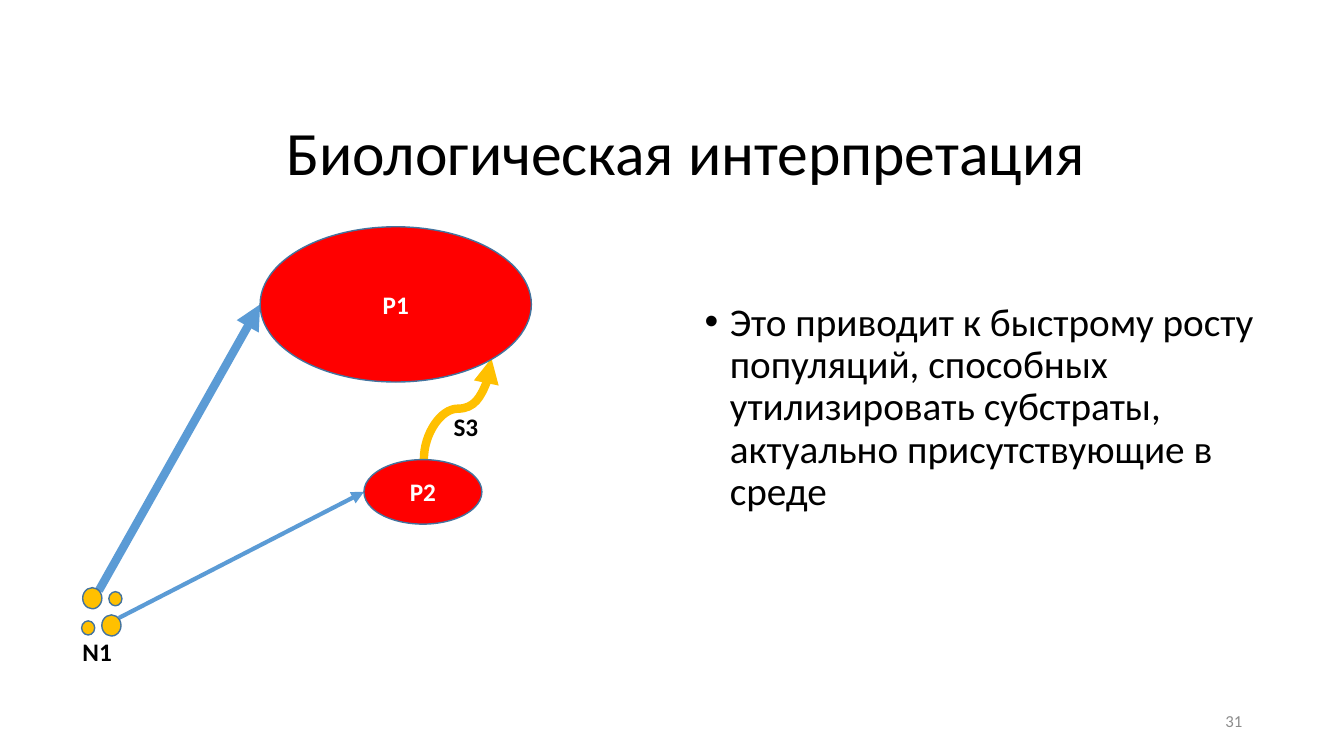
from lxml import etree
from pptx import Presentation
from pptx.dml.color import RGBColor
from pptx.enum import shapes, text
from pptx.oxml import ns
from pptx.util import Inches, Pt

BLACK = RGBColor(0x00, 0x00, 0x00)
WHITE = RGBColor(0xFF, 0xFF, 0xFF)
GRAY = RGBColor(0x8C, 0x8C, 0x8C)
RED = RGBColor(0xFF, 0x00, 0x00)
GOLD = RGBColor(0xFF, 0xC0, 0x00)
BLUE = RGBColor(0x5B, 0x9B, 0xD5)
OUTLINE = RGBColor(0x43, 0x73, 0x9E)

presentation = Presentation()
presentation.slide_width = Inches(13.33)
presentation.slide_height = Inches(7.5)
slide = presentation.slides.add_slide(presentation.slide_layouts[6])


def write(shape, words, size, color, bold=False, align=text.PP_ALIGN.LEFT,
          anchor=text.MSO_ANCHOR.MIDDLE, wrap=True):
    """Put one formatted paragraph into the shape and return it."""
    frame = shape.text_frame
    frame.text = words
    frame.word_wrap = wrap
    frame.vertical_anchor = anchor
    paragraph = frame.paragraphs[0]
    paragraph.alignment = align
    font = paragraph.runs[0].font
    font.name, font.size, font.bold = "Calibri", Pt(size), bold
    font.color.rgb = color
    return paragraph


title = slide.shapes.add_textbox(Inches(2.74), Inches(0.84), Inches(9.84), Inches(1.41))
write(title, "Биологическая интерпретация", 44, BLACK).line_spacing = 0.9

body = slide.shapes.add_textbox(Inches(6.89), Inches(2.95), Inches(5.87), Inches(3.86))
paragraph = write(
    body,
    "Это приводит к быстрому росту популяций, способных утилизировать субстраты, "
    "актуально присутствующие в среде",
    28, BLACK, anchor=text.MSO_ANCHOR.TOP)
paragraph.line_spacing = 0.9
properties = paragraph._p.get_or_add_pPr()
properties.set("marL", str(Inches(0.25)))
properties.set("indent", str(-Inches(0.25)))
etree.SubElement(properties, ns.qn("a:buFont")).set("typeface", "Arial")
etree.SubElement(properties, ns.qn("a:buChar")).set("char", "•")

# Populations, arrows and substrate grains, from back to front
ellipses = [
    ("P1", 2.58, 2.25, 2.69, 1.54, RED),
    ("P2", 3.61, 4.56, 1.17, 0.64, RED),
    ("", 0.82, 5.83, 0.19, 0.21, GOLD),
    ("", 1.01, 6.1, 0.19, 0.21, GOLD),
    ("", 1.08, 5.87, 0.13, 0.14, GOLD),
    ("", 0.81, 6.16, 0.13, 0.14, GOLD),
]
STRAIGHT, CURVE = shapes.MSO_CONNECTOR.STRAIGHT, shapes.MSO_CONNECTOR.CURVE
# The curve is laid out sideways and turned by a quarter
arrows = [
    (STRAIGHT, 0.98, 5.86, 2.58, 3.02, BLUE, 6, 0),
    (STRAIGHT, 1.18, 6.13, 3.61, 4.88, BLUE, 3, 0),
    (CURVE, 5.04, 4.39, 4.04, 3.72, GOLD, 6, 90),
]

for kind, x1, y1, x2, y2, color, width, turn in arrows:
    arrow = slide.shapes.add_connector(kind, Inches(x1), Inches(y1), Inches(x2), Inches(y2))
    arrow.line.color.rgb = color
    arrow.line.width = Pt(width)
    etree.SubElement(arrow.line._get_or_add_ln(), ns.qn("a:tailEnd")).set("type", "triangle")
    shape_properties = arrow._element.spPr
    etree.SubElement(shape_properties, ns.qn("a:effectLst"))
    if turn:
        shape_properties.find(ns.qn("a:xfrm")).set("rot", str(turn * 60000))

for label, left, top, width, height, color in ellipses:
    ellipse = slide.shapes.add_shape(
        shapes.MSO_SHAPE.OVAL, Inches(left), Inches(top), Inches(width), Inches(height))
    ellipse.shadow.inherit = False
    ellipse.fill.solid()
    ellipse.fill.fore_color.rgb = color
    ellipse.line.color.rgb = OUTLINE
    ellipse.line.width = Pt(1)
    if label:
        write(ellipse, label, 18, WHITE, bold=True, align=text.PP_ALIGN.CENTER)

for label, left, top, width in [("S3", 4.4, 4.03, 0.48), ("N1", 0.72, 6.26, 0.53)]:
    caption = slide.shapes.add_textbox(Inches(left), Inches(top), Inches(width), Inches(0.4))
    write(caption, label, 18, BLACK, bold=True, anchor=text.MSO_ANCHOR.TOP, wrap=False)

number = slide.shapes.add_textbox(Inches(9.42), Inches(6.95), Inches(3), Inches(0.4))
write(number, "31", 12, GRAY, align=text.PP_ALIGN.RIGHT)

presentation.save("out.pptx")
